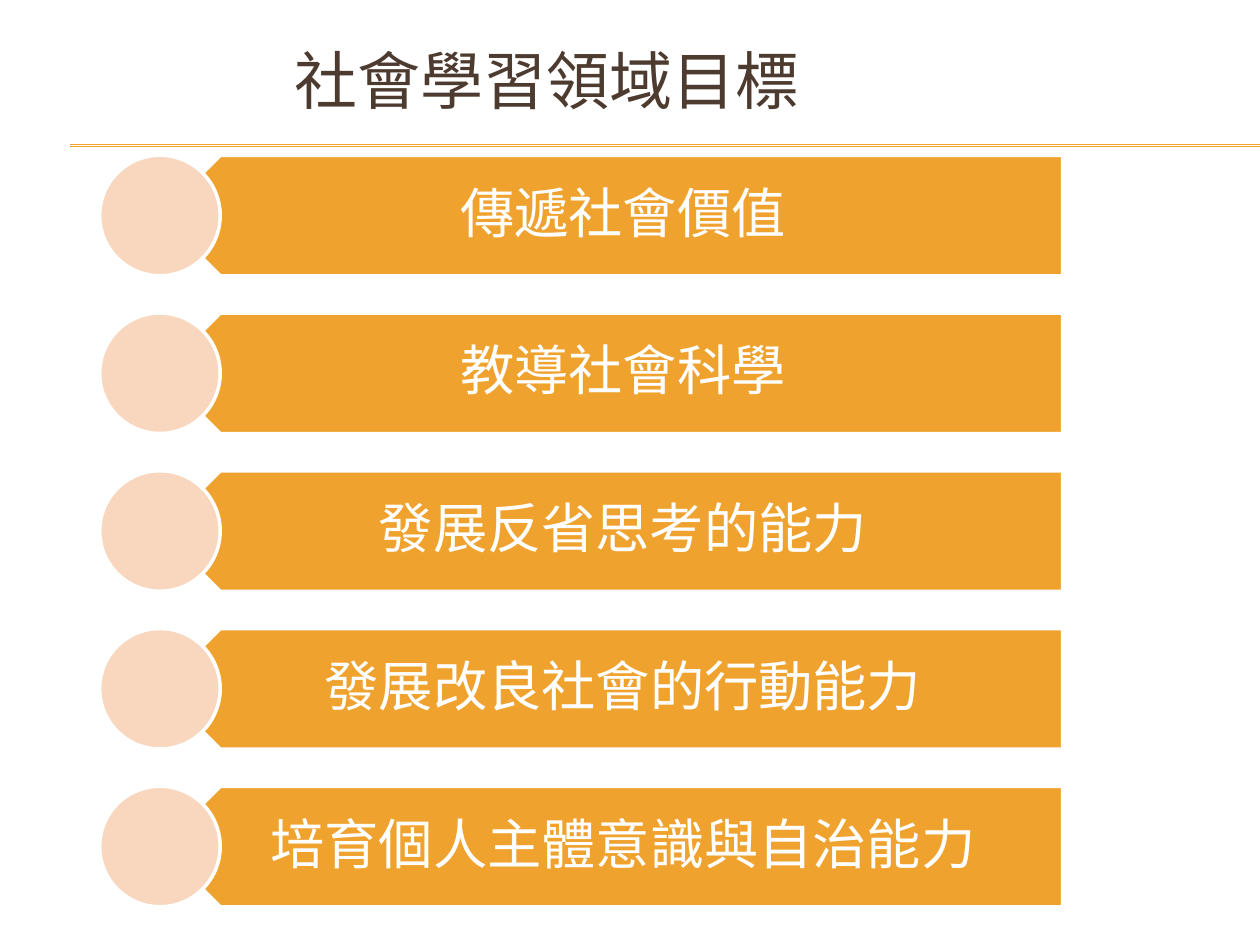
from dataclasses import dataclass

from lxml import etree
from pptx import Presentation
from pptx.dml.color import RGBColor
from pptx.enum import shapes, text
from pptx.oxml import ns
from pptx.util import Cm, Pt


@dataclass(frozen=True)
class Theme:
    font: str = "Roboto"
    accent: RGBColor = RGBColor(0xF0, 0xA2, 0x2E)
    circle: RGBColor = RGBColor(0xF8, 0xD7, 0xBE)
    heading: RGBColor = RGBColor(0x4E, 0x3B, 0x30)
    white: RGBColor = RGBColor(0xFF, 0xFF, 0xFF)
    heading_size: Pt = Pt(36)
    goal_size: Pt = Pt(31)
    outline: Pt = Pt(2)
    rule: Pt = Pt(0.75)


THEME = Theme()
GOALS = [
    "傳遞社會價值",
    "教導社會科學",
    "發展反省思考的能力",
    "發展改良社會的行動能力",
    "培育個人主體意識與自治能力",
]


def write(shape, content, size, color, alignment):
    frame = shape.text_frame
    frame.word_wrap = True
    frame.vertical_anchor = text.MSO_ANCHOR.MIDDLE
    paragraph = frame.paragraphs[0]
    paragraph.text = content
    paragraph.alignment = alignment
    paragraph.font.name = THEME.font
    paragraph.font.size = size
    paragraph.font.color.rgb = color
    return paragraph


def add_rule(slide, left, top, right):
    rule = slide.shapes.add_connector(
        shapes.MSO_CONNECTOR.STRAIGHT, left, top, right, top)
    rule.line.color.rgb = THEME.accent
    rule.line.width = THEME.rule
    etree.SubElement(rule._element.spPr, ns.qn("a:effectLst"))


def add_outlined(slide, kind, left, top, width, height, color):
    shape = slide.shapes.add_shape(kind, left, top, width, height)
    shape.shadow.inherit = False
    shape.fill.solid()
    shape.fill.fore_color.rgb = color
    shape.line.color.rgb = THEME.white
    shape.line.width = THEME.outline
    return shape


def build_heading(slide, left, top, width, height, content):
    title = slide.shapes.title
    title.left, title.top, title.width, title.height = left, top, width, height
    write(title, content, THEME.heading_size, THEME.heading, text.PP_ALIGN.LEFT)


def build_goal(slide, left, top, width, height, content):
    bar_left = left + height // 2
    bar_box = (bar_left, top, left + width - bar_left, height)
    bar = add_outlined(slide, shapes.MSO_SHAPE.PENTAGON, *bar_box, THEME.accent)
    bar.rotation = 180

    label = slide.shapes.add_textbox(*bar_box)
    frame = label.text_frame
    frame.margin_left, frame.margin_right = Cm(1.07), Cm(0.61)
    frame.margin_top = frame.margin_bottom = Cm(0.33)
    paragraph = write(label, content, THEME.goal_size, THEME.white,
                      text.PP_ALIGN.CENTER)
    paragraph.line_spacing = 0.9

    add_outlined(slide, shapes.MSO_SHAPE.OVAL, left, top, height, height,
                 THEME.circle)


def build_goal_list(slide, left, top, width, height, goals):
    row_height = Cm(2.43)
    pitch = (height - row_height) // (len(goals) - 1)
    for index, goal in enumerate(goals):
        build_goal(slide, left, top + index * pitch, width, row_height, goal)


def main():
    presentation = Presentation()
    presentation.slide_width, presentation.slide_height = Cm(25.4), Cm(19.05)
    slide = presentation.slides.add_slide(presentation.slide_layouts[5])

    for rule_top in (Cm(2.92), Cm(2.95)):
        add_rule(slide, Cm(1.42), rule_top, presentation.slide_width)
    build_heading(slide, Cm(5.69), Cm(0), Cm(13), Cm(3.18), "社會學習領域目標")
    build_goal_list(slide, Cm(2.01), Cm(3.13), Cm(19.41), Cm(15.15), GOALS)

    presentation.save("out.pptx")


if __name__ == "__main__":
    main()
